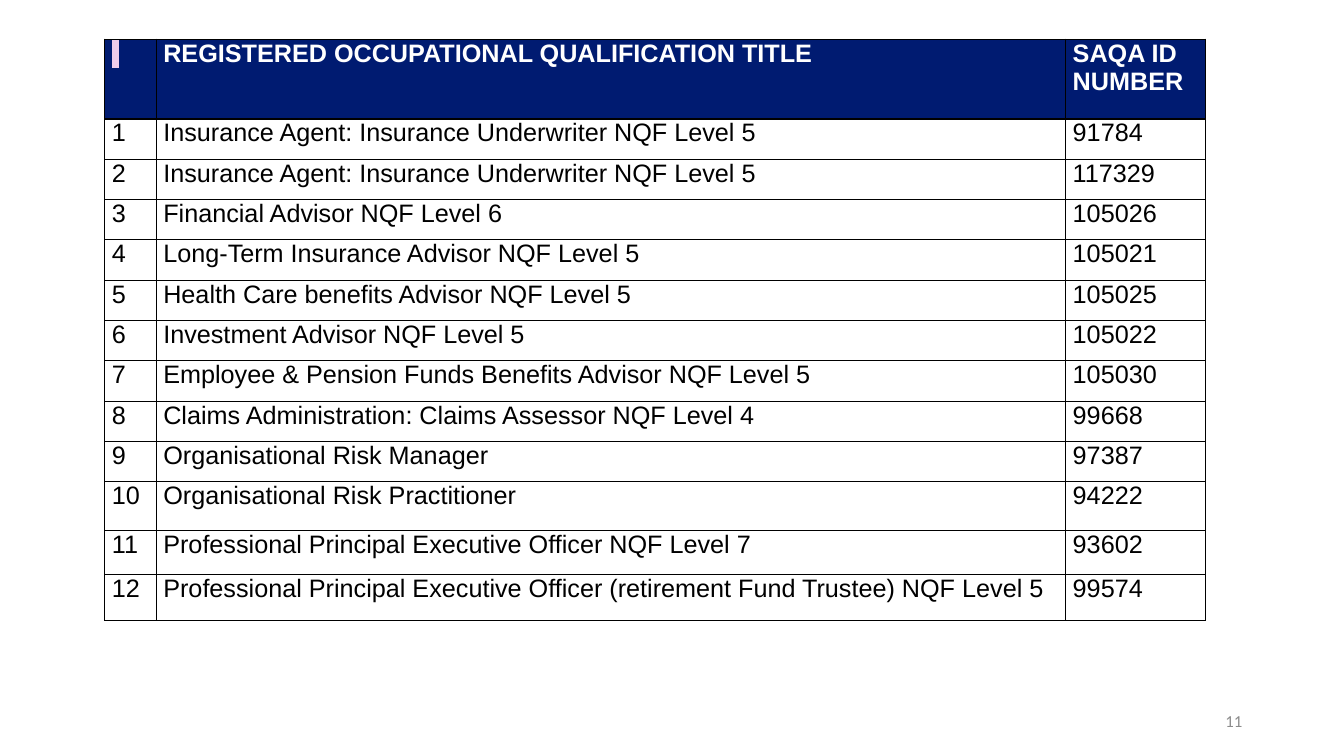
from typing import Any, NamedTuple

from lxml import etree
from pptx import Presentation
from pptx.dml.color import RGBColor
from pptx.enum.text import MSO_ANCHOR, PP_ALIGN
from pptx.oxml.ns import qn
from pptx.util import Inches, Pt

NAVY = RGBColor(0x00, 0x1B, 0x71)
WHITE = RGBColor(0xFF, 0xFF, 0xFF)
BLACK = RGBColor(0x00, 0x00, 0x00)
GREY = RGBColor(0x8C, 0x8C, 0x8C)
PINK = RGBColor(0xF0, 0xCD, 0xEB)
LEFT, RIGHT, JUSTIFY = PP_ALIGN.LEFT, PP_ALIGN.RIGHT, PP_ALIGN.JUSTIFY
MIDDLE = MSO_ANCHOR.MIDDLE

HEADER_FONT = {"size": Pt(18), "name": "Arial", "bold": True}
BODY_FONT = {"size": Pt(18), "name": "Arial", "bold": False}
PAGE_FONT = {"size": Pt(12), "name": "Calibri"}


class Qualification(NamedTuple):
    title: str
    saqa_id: str
    align: Any = LEFT
    height: float = 0.4


HEADINGS = (" ", "REGISTERED OCCUPATIONAL QUALIFICATION TITLE", "SAQA ID NUMBER")
HEADER_HEIGHT = 0.79
COLUMN_WIDTHS = (0.51, 9.02, 1.39)
QUALIFICATIONS = (
    Qualification("Insurance Agent: Insurance Underwriter NQF Level 5", "91784"),
    Qualification("Insurance Agent: Insurance Underwriter NQF Level 5", "117329"),
    Qualification("Financial Advisor NQF Level 6", "105026"),
    Qualification("Long-Term Insurance Advisor NQF Level 5", "105021"),
    Qualification("Health Care benefits Advisor NQF Level 5", "105025"),
    Qualification("Investment Advisor NQF Level 5", "105022"),
    Qualification("Employee & Pension Funds Benefits Advisor NQF Level 5", "105030"),
    Qualification("Claims Administration: Claims Assessor NQF Level 4", "99668"),
    Qualification("Organisational Risk Manager", "97387", JUSTIFY),
    Qualification("Organisational Risk Practitioner", "94222", JUSTIFY, 0.48),
    Qualification("Professional Principal Executive Officer NQF Level 7", "93602",
                  JUSTIFY, 0.44),
    Qualification("Professional Principal Executive Officer (retirement Fund Trustee) "
                  "NQF Level 5", "99574", JUSTIFY, 0.46),
)


def add_color(parent: Any, tag: str, color: RGBColor) -> None:
    holder = etree.SubElement(parent, qn(tag))
    etree.SubElement(holder, qn("a:srgbClr"), val=str(color))


def write(tf: Any, text: str, align: Any, color: RGBColor, font: dict[str, Any]) -> Any:
    p = tf.paragraphs[0]
    p.alignment = align
    r = p.add_run()
    r.text = text
    for key, value in font.items():
        setattr(r.font, key, value)
    r.font.color.rgb = color
    return r


def highlight(r: Any, color: RGBColor) -> None:
    props = r.font._element
    add_color(props, "a:highlight", color)
    props.find(qn("a:latin")).addprevious(props[-1])


def add_borders(cell: Any) -> None:
    props = cell._tc.get_or_add_tcPr()
    for side in ("a:lnL", "a:lnR", "a:lnT", "a:lnB"):
        line = etree.SubElement(props, qn(side), w=str(Pt(1)))
        add_color(line, "a:solidFill", BLACK)


def fill_row(table: Any, index: int, texts: tuple[str, ...], height: float,
             align: Any = LEFT, header: bool = False) -> None:
    table.rows[index].height = Inches(height)
    for cell, text in zip(table.rows[index].cells, texts):
        cell.margin_left = cell.margin_right = Inches(0.07)
        cell.margin_top = cell.margin_bottom = 0
        add_borders(cell)
        if header:
            cell.fill.solid()
            cell.fill.fore_color.rgb = NAVY
        else:
            cell.fill.background()
        write(cell.text_frame, text, align, WHITE if header else BLACK,
              HEADER_FONT if header else BODY_FONT)


def add_qualification_table(s: Any) -> None:
    heights = [HEADER_HEIGHT] + [q.height for q in QUALIFICATIONS]
    table = s.shapes.add_table(len(heights), len(COLUMN_WIDTHS), Inches(1.04), Inches(0.39),
                               Inches(sum(COLUMN_WIDTHS)), Inches(sum(heights))).table
    table.first_row = table.horz_banding = False
    for column, width in zip(table.columns, COLUMN_WIDTHS):
        column.width = Inches(width)
    fill_row(table, 0, HEADINGS, HEADER_HEIGHT, header=True)
    highlight(table.cell(0, 0).text_frame.paragraphs[0].runs[0], PINK)
    for number, q in enumerate(QUALIFICATIONS, start=1):
        fill_row(table, number, (str(number), q.title, q.saqa_id), q.height, q.align)


def add_page_number(s: Any, text: str) -> None:
    tf = s.shapes.add_textbox(Inches(9.42), Inches(6.95), Inches(3), Inches(0.4)).text_frame
    tf.word_wrap = True
    tf.vertical_anchor = MIDDLE
    write(tf, text, RIGHT, GREY, PAGE_FONT)


def main() -> None:
    prs = Presentation()
    prs.slide_width, prs.slide_height = Inches(13.33), Inches(7.5)
    s = prs.slides.add_slide(prs.slide_layouts[6])
    add_page_number(s, "11")
    add_qualification_table(s)
    prs.save("out.pptx")


if __name__ == "__main__":
    main()
